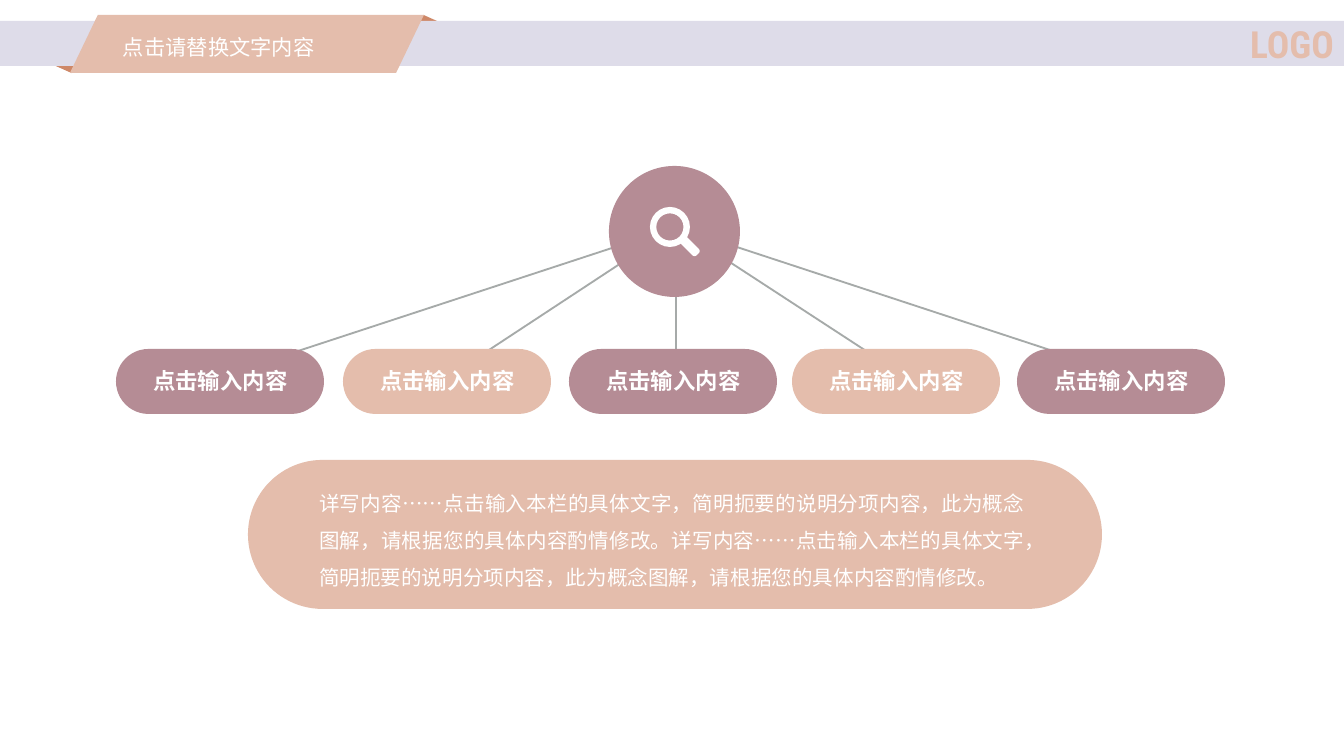
"""Build a slide with one search hub linked to five topic pills and a summary."""
from lxml import etree
from pptx import Presentation
from pptx.dml.color import RGBColor
from pptx.enum.lang import MSO_LANGUAGE_ID
from pptx.enum.shapes import MSO_CONNECTOR, MSO_SHAPE
from pptx.enum.text import MSO_ANCHOR, PP_ALIGN
from pptx.oxml.ns import qn
from pptx.util import Emu, Pt

LINE = MSO_CONNECTOR.STRAIGHT
RECT = MSO_SHAPE.RECTANGLE
ROUND = MSO_SHAPE.ROUNDED_RECTANGLE
TRIANGLE = MSO_SHAPE.ISOSCELES_TRIANGLE
PARALLELOGRAM = MSO_SHAPE.PARALLELOGRAM
OVAL = MSO_SHAPE.OVAL
DONUT = MSO_SHAPE.DONUT
MIDDLE, TOP = MSO_ANCHOR.MIDDLE, MSO_ANCHOR.TOP
LEFT, CENTER, RIGHT, JUSTIFY = (
    PP_ALIGN.LEFT, PP_ALIGN.CENTER, PP_ALIGN.RIGHT, PP_ALIGN.JUSTIFY)
CHINESE = MSO_LANGUAGE_ID.SIMPLIFIED_CHINESE

EMU_PER_PX = 914400 / 134.4
SANS = "Noto Sans CJK SC"
WHITE, PEACH, MAUVE = "FFFFFF", "E4BDAC", "B58C95"
LAVENDER, RUST, GRAY = "DEDCE9", "CE8868", "A6AAA9"

HUB = (676, 227)
PILLS = [
    (116, 219, MAUVE),
    (343, 448, PEACH),
    (569, 676, MAUVE),
    (792, 906, PEACH),
    (1017, 1132, MAUVE),
]
LABEL = "点击输入内容"
SUMMARY = (
    "详写内容……点击输入本栏的具体文字，简明扼要的说明分项内容，此为概念图解，请根据您的具体内容酌情修改。"
    "详写内容……点击输入本栏的具体文字，简明扼要的说明分项内容，此为概念图解，请根据您的具体内容酌情修改。"
)


def px(n):
    """Turn pixels into EMU."""
    return Emu(round(n * EMU_PER_PX))


def rgb(color):
    """Turn a hex string into a colour."""
    return RGBColor.from_string(color)


def add_shape(s, kind, box, fill, adj=None, rotation=0):
    """Add a flat preset shape without an outline."""
    sp = s.shapes.add_shape(kind, *map(px, box))
    sp.shadow.inherit = False
    sp.fill.solid()
    sp.fill.fore_color.rgb = rgb(fill)
    sp.line.fill.background()
    sp.rotation = rotation
    if adj is not None:
        sp.adjustments[0] = adj
    return sp


def add_line(s, start, end):
    """Add a thin gray line between two points."""
    cx = s.shapes.add_connector(LINE, *map(px, start + end))
    cx.line.color.rgb = rgb(GRAY)
    cx.line.width = Pt(1)
    etree.SubElement(cx._element.spPr, qn("a:effectLst"))


def set_text(sp, text, size, color=WHITE, font=SANS, bold=False, align=LEFT,
             anchor=MIDDLE, spacing=1.0, before=0, inset=(0, 0)):
    """Write one formatted paragraph into a shape."""
    tf = sp.text_frame
    tf.word_wrap = True
    tf.vertical_anchor = anchor
    tf.margin_left = tf.margin_right = px(inset[0])
    tf.margin_top = tf.margin_bottom = px(inset[1])
    p = tf.paragraphs[0]
    p.alignment = align
    p.line_spacing = spacing
    p.space_before = Pt(before)
    r = p.add_run()
    r.text = text
    r.font.size = Pt(size)
    r.font.bold = bold
    r.font.name = font
    r.font.language_id = CHINESE
    r.font.color.rgb = rgb(color)
    if font == SANS:
        etree.SubElement(r.font._element, qn("a:ea")).set("typeface", font)


def add_text(s, box, text, size, **style):
    """Add a text box."""
    set_text(s.shapes.add_textbox(*map(px, box)), text, size, **style)


def add_header(s):
    """Add the band with its folded ribbon and title."""
    add_shape(s, TRIANGLE, (363, 15, 121, 27), RUST)
    add_shape(s, TRIANGLE, (11, 46, 121, 27), RUST, rotation=180)
    band = add_shape(s, RECT, (0, 21, 1344, 45), LAVENDER)
    set_text(band, "LOGO", 20, color=PEACH, font="Roboto Condensed",
             bold=True, align=RIGHT, inset=(10, 5))
    add_shape(s, PARALLELOGRAM, (70, 15, 354, 58), PEACH, adj=0.48)
    add_text(s, (113, 17, 265, 48), "点击请替换文字内容", 11.4, font="Arial",
             anchor=TOP, spacing=1.5, inset=(10, 5))


def add_hub(s):
    """Add the round hub with its magnifier."""
    add_shape(s, OVAL, (609, 166, 131, 131), MAUVE)
    add_shape(s, DONUT, (650, 207, 40, 40), WHITE, adj=0.16)
    add_shape(s, ROUND, (679, 242, 22, 9), WHITE, adj=0.3, rotation=45)


def add_pill(s, left, fill):
    """Add a topic pill with its label."""
    add_shape(s, ROUND, (left, 349, 208, 65), fill, adj=0.5)
    add_text(s, (left + 1, 359, 207, 46), LABEL, 12, bold=True,
             align=CENTER, spacing=0.9, before=10)


def add_summary(s):
    """Add the summary panel."""
    add_shape(s, ROUND, (248, 460, 854, 149), PEACH, adj=0.5)
    add_text(s, (319, 493, 706, 83), SUMMARY, 11, align=JUSTIFY,
             spacing=1.5, before=10)


def main():
    """Build and save the slide."""
    prs = Presentation()
    prs.slide_width, prs.slide_height = px(1344), px(756)
    s = prs.slides.add_slide(prs.slide_layouts[6])
    add_header(s)
    for _, end, _ in PILLS:
        add_line(s, HUB, (end, 377))
    for left, _, fill in PILLS:
        add_pill(s, left, fill)
    add_hub(s)
    add_summary(s)
    prs.save("out.pptx")


if __name__ == "__main__":
    main()
